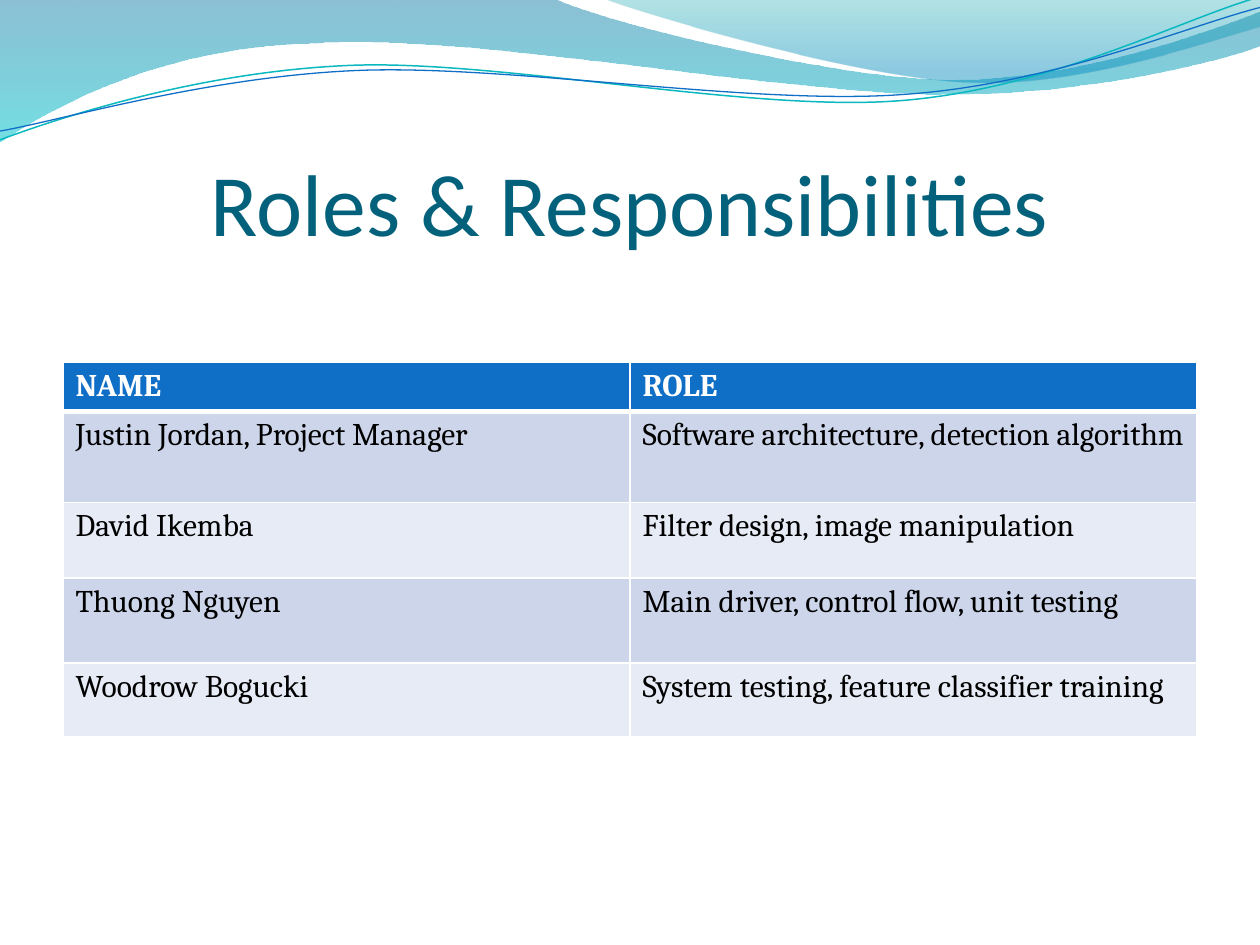
from math import cos, radians, sin

from lxml import etree
from pptx import Presentation
from pptx.dml.color import RGBColor
from pptx.enum.text import MSO_ANCHOR, PP_ALIGN
from pptx.oxml.ns import qn
from pptx.util import Pt

CENTER = PP_ALIGN.CENTER
LEFT = PP_ALIGN.LEFT
BOTTOM = MSO_ANCHOR.BOTTOM
TOP = MSO_ANCHOR.TOP

LINE_TILT = 2.7
LEFT_WAVE = [
    [(316.8, -0.7)],
    [(342.7, 12.2), (478.1, 45.4), (545.8, 45.4)],
    [(614.2, 45.4), (689.8, 18.7), (720, 6.5)],
    [(720.7, 25.9)],
    [(707.8, 31.7), (626.4, 54.7), (537.1, 54)],
    [(447.8, 54), (275, 20.2), (185, 24.5)],
    [(92.9, 25.9), (33.1, 59.8), (-0.7, 81.4)],
    [(0, 0)],
]
RIGHT_WAVE = [
    [(366.5, 7.9), (491, 44.6), (553.7, 46.8)],
    [(616.3, 49.7), (691.9, 23), (720, 15.1)],
    [(720, 0)],
    [(344.9, -0.7)],
]
TEAL_LINE = [
    [(34.6, 67), (113.8, 41), (199.4, 37.4)],
    [(284.4, 33.8), (427, 64.1), (513.4, 57.6)],
    [(599.8, 51.1), (675.4, 10.8), (718.6, -1.4)],
]
BLUE_LINE = [
    [(33.8, 69.1), (118.1, 43.9), (203.8, 40.3)],
    [(290.2, 36.7), (429.8, 60.5), (516.2, 54)],
    [(601.9, 48.2), (677.5, 15.1), (720, 4.3)],
]
ROWS = [
    ("NAME", "ROLE"),
    ("Justin Jordan, Project Manager", "Software architecture, detection algorithm"),
    ("David Ikemba", "Filter design, image manipulation"),
    ("Thuong Nguyen", "Main driver, control flow, unit testing"),
    ("Woodrow Bogucki", "System testing, feature classifier training"),
]
ROW_HEIGHTS = [27.4, 52, 43.4, 48.6, 42.2]


def color(value):
    return RGBColor.from_string(value)


def turn(point, center, degrees):
    x, y = point[0] - center[0], point[1] - center[1]
    cosine, sine = cos(radians(degrees)), sin(radians(degrees))
    return center[0] + x * cosine - y * sine, center[1] + x * sine + y * cosine


def add_outline(slide, start, segments, close):
    points = [point for segment in segments for point in segment]
    builder = slide.shapes.build_freeform(Pt(start[0]), Pt(start[1]))
    builder.add_line_segments([(Pt(x), Pt(y)) for x, y in points], close=close)
    shape = builder.convert_to_shape()
    shape.shadow.inherit = False
    steps = iter(list(shape.element.iter(qn("a:lnTo"))))
    for segment in segments:
        first, *others = [next(steps) for point in segment]
        if others:
            first.tag = qn("a:cubicBezTo")
            for step in others:
                first.append(step[0])
                step.getparent().remove(step)
    return shape


def add_wave(slide, start, segments, stops):
    shape = add_outline(slide, start, segments, True)
    shape.line.fill.background()
    shape.fill.gradient()
    shape.fill.gradient_angle = 270
    for gradient_stop, (position, value, opacity) in zip(shape.fill.gradient_stops, stops):
        gradient_stop.position = position
        gradient_stop.color.rgb = color(value)
    fills = shape.element.spPr.iter(qn("a:srgbClr"))
    for element, (position, value, opacity) in zip(fills, stops):
        etree.SubElement(element, qn("a:alpha"), val=str(opacity * 1000))


def add_wave_line(slide, start, segments, center, value, width):
    level_start = turn(start, center, LINE_TILT)
    level_segments = [[turn(point, center, LINE_TILT) for point in segment] for segment in segments]
    shape = add_outline(slide, level_start, level_segments, False)
    shape.rotation = -LINE_TILT
    shape.fill.background()
    shape.line.color.rgb = color(value)
    shape.line.width = Pt(width)


def write_text(frame, text, *, font, size, value, bold=False, align=LEFT, anchor=TOP):
    frame.word_wrap = True
    frame.vertical_anchor = anchor
    paragraph = frame.paragraphs[0]
    paragraph.alignment = align
    run = paragraph.add_run()
    run.text = text
    run.font.name = font
    run.font.size = Pt(size)
    run.font.bold = bold
    run.font.color.rgb = color(value)


def set_title(slide, text):
    title = slide.shapes.title
    title.left, title.top, title.width, title.height = Pt(36), Pt(55), Pt(648), Pt(90)
    frame = title.text_frame
    frame.margin_left = frame.margin_right = frame.margin_bottom = 0
    frame.margin_top = Pt(3.6)
    write_text(frame, text, font="Calibri", size=50, value="04617B", align=CENTER, anchor=BOTTOM)


def set_borders(cell, value, bottom_width):
    properties = cell._tc.get_or_add_tcPr()
    for side, width in (("L", 1), ("R", 1), ("T", 1), ("B", bottom_width)):
        line = etree.SubElement(properties, qn(f"a:ln{side}"), w=str(Pt(width)))
        fill = etree.SubElement(line, qn("a:solidFill"))
        etree.SubElement(fill, qn("a:srgbClr"), val=value)


def add_role_table(slide):
    shape = slide.shapes.add_table(
        len(ROWS), 2, Pt(36), Pt(207), Pt(648), Pt(sum(ROW_HEIGHTS))
    )
    table = shape.table
    for row_index, (texts, height) in enumerate(zip(ROWS, ROW_HEIGHTS)):
        table.rows[row_index].height = Pt(height)
        header = row_index == 0
        band = "CCD5EA" if row_index % 2 else "E7EBF5"
        for column_index, text in enumerate(texts):
            cell = table.cell(row_index, column_index)
            set_borders(cell, "FFFFFF", 3 if header else 1)
            cell.fill.solid()
            cell.fill.fore_color.rgb = color("0F6FC6" if header else band)
            write_text(
                cell.text_frame, text, font="Cambria", size=18,
                value="FFFFFF" if header else "000000", bold=header,
            )


def main():
    presentation = Presentation()
    presentation.slide_width = Pt(720)
    presentation.slide_height = Pt(540)
    slide = presentation.slides.add_slide(presentation.slide_layouts[5])
    add_wave(slide, (0, 0), LEFT_WAVE, [(0, "0074A1", 45), (1, "00C6CF", 55)])
    add_wave(slide, (344.9, -0.7), RIGHT_WAVE, [(0, "00A1A9", 30), (0.8, "008BBF", 45)])
    add_wave_line(slide, (0, 79.9), TEAL_LINE, (359.3, 41.4), "0AB8BF", 0.85)
    add_wave_line(slide, (0, 74.9), BLUE_LINE, (359.6, 42.5), "0F6FC6", 0.75)
    set_title(slide, "Roles & Responsibilities")
    add_role_table(slide)
    presentation.save("out.pptx")


if __name__ == "__main__":
    main()
